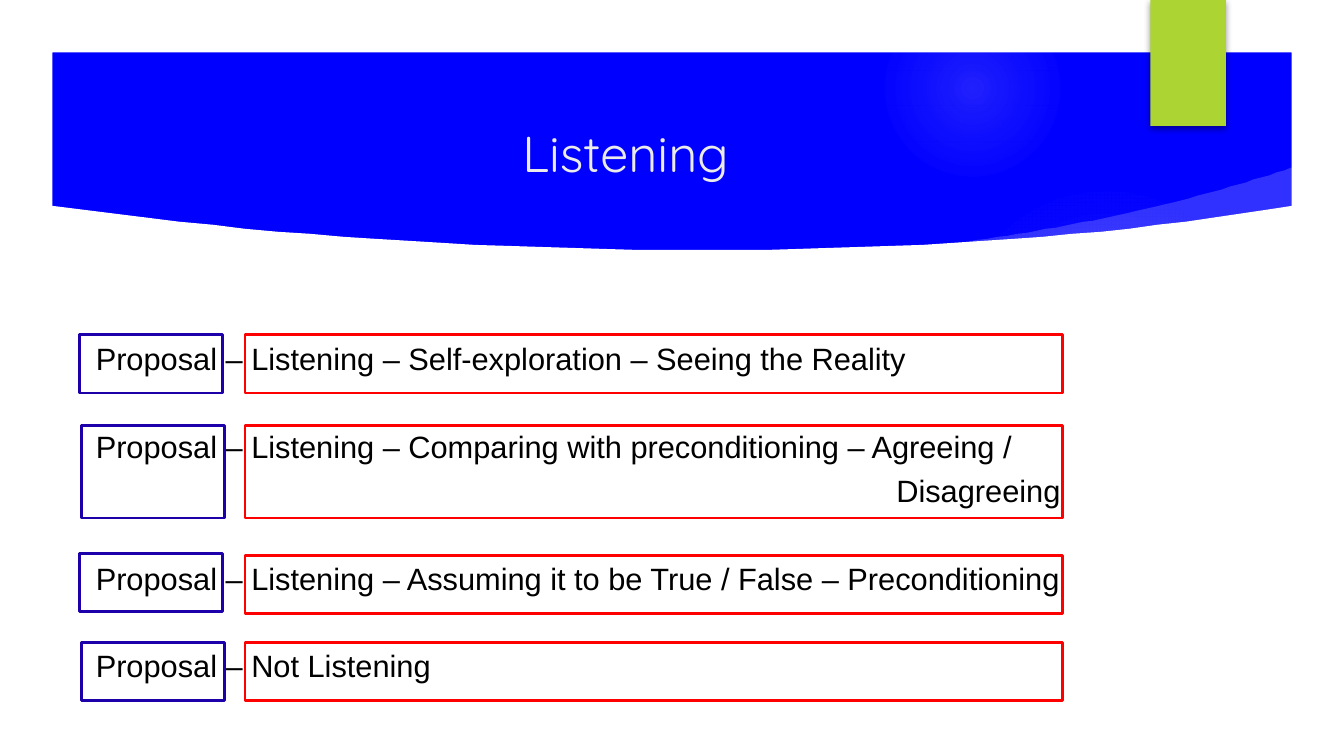
from pptx import Presentation
from pptx.dml.color import RGBColor
from pptx.enum.shapes import MSO_SHAPE as Kind
from pptx.enum.text import MSO_ANCHOR as Anchor, MSO_AUTO_SIZE as Fit, PP_ALIGN as Align
from pptx.oxml import parse_xml
from pptx.oxml.ns import nsdecls
from pptx.util import Pt

PX = 9144  # EMU per px, 100 px to the inch
WIDE, HIGH = 1333, 750
HEX = {"blue": "0000FF", "white": "FFFFFF", "green": "ACD433", "pale": "EBEBEB",
       "glow": "F7F7F7", "black": "000000", "red": "FF0000", "navy": "1E00AA"}

# text, space before in points, left margin in px
LINES = [
    ("Proposal – Listening – Self-exploration – Seeing the Reality", 0, 0),
    ("Proposal – Listening – Comparing with preconditioning – Agreeing /", 36.1, 0),
    ("Disagreeing", 5.4, 794),
    ("Proposal – Listening – Assuming it to be True / False – Preconditioning", 36.1, 0),
    ("Proposal – Not Listening", 36.1, 0),
]
# navy left, navy top, red top, height
ROWS = [(79, 332, 332, 58), (81, 422, 422, 92), (79, 549, 551, 58), (81, 637, 637, 58)]


def emu(*sizes):
    return [round(size * PX) for size in sizes]


def color(name):
    return RGBColor.from_string(HEX[name])


def paint(shape, fill=None, line=None):
    shape.shadow.inherit = False
    if fill:
        shape.fill.solid()
        shape.fill.fore_color.rgb = color(fill)
    else:
        shape.fill.background()
    if line:
        shape.line.color.rgb = color(line)
        shape.line.width = Pt(2)
    else:
        shape.line.fill.background()
    return shape


def block(slide, kind, box, **look):
    return paint(slide.shapes.add_shape(kind, *emu(*box)), **look)


def outline(slide, points, fill):
    pen = slide.shapes.build_freeform(*points[0], scale=PX)
    pen.add_line_segments(points[1:], close=True)
    return paint(pen.convert_to_shape(), fill=fill)


def curve(*knots, steps=40):
    """Points along the Bezier curve with these control points."""
    def at(t):
        row = knots
        while len(row) > 1:
            row = [(a + (c - a) * t, b + (d - b) * t) for (a, b), (c, d) in zip(row, row[1:])]
        return row[0]
    return [at(i / steps) for i in range(steps + 1)]


def glow(slide, box, stops):
    """Round light that fades out; stops are (percent, opacity)."""
    disc = block(slide, Kind.OVAL, box, fill="glow")
    marks = "".join(
        f'<a:gs pos="{at * 1000}"><a:srgbClr val="{HEX["glow"]}">'
        f'<a:alpha val="{alpha * 1000}"/></a:srgbClr></a:gs>' for at, alpha in stops)
    grad = parse_xml(
        f'<a:gradFill {nsdecls("a")}><a:gsLst>{marks}</a:gsLst><a:path path="circle">'
        '<a:fillToRect l="50000" t="50000" r="50000" b="50000"/></a:path></a:gradFill>')
    props = disc._element.spPr
    props.replace(props.find(".//{*}solidFill"), grad)


def banner(slide, box):
    x, y, w, h = box
    end = x + w
    glow(slide, (x + 891, y + 131, 308, 308), [(0, 6), (36, 5), (69, 0), (100, 0)])
    glow(slide, (x + 825, y - 52, 175, 175), [(0, 13), (36, 6), (73, 0), (100, 0)])

    crest = curve((end - 354, y + 192), (end - 149, y + 165), (end - 2, y + 114))
    sweep = outline(slide, crest + [(end + 5, y + 161), (end - 350, y + 199)], "white")
    tint = sweep._element.spPr.find(".//{*}srgbClr")
    tint.append(parse_xml(f'<a:alpha {nsdecls("a")} val="19000"/>'))

    edge = y + 152
    dip = curve((x - 2, edge), (x + 423, edge + 59), (end - 345, edge + 59), (end, edge))
    outline(slide, dip + [(end, y + h), (x - 2, y + h)], "white")

    frame = block(slide, Kind.FRAME, (0, 0, WIDE, HIGH), fill="white")
    frame.adjustments[0] = y / HIGH


def tab(slide, box):
    flag = block(slide, Kind.RECTANGLE, box, fill="green")
    flag._element.spPr.find("{*}effectLst").append(parse_xml(
        f'<a:outerShdw {nsdecls("a")} blurRad="63500" dist="25400" dir="5400000">'
        f'<a:srgbClr val="{HEX["black"]}"><a:alpha val="44000"/></a:srgbClr></a:outerShdw>'))


def place(slide, holder, box):
    holder.left, holder.top, holder.width, holder.height = emu(*box)
    slide.shapes._spTree.append(holder._element)  # in front of the banner
    frame = holder.text_frame
    frame.word_wrap, frame.auto_size = True, Fit.NONE
    frame.vertical_anchor = Anchor.TOP
    return frame


def write(para, text, font="Arial", size=22, ink="black", before=0, left=0):
    props = para._p.get_or_add_pPr()
    props.set("marL", str(left * PX))
    props.set("indent", "0")
    props.append(parse_xml(f'<a:buNone {nsdecls("a")}/>'))
    para.text = text
    para.alignment = Align.LEFT
    para.space_before = Pt(before)
    para.font.name, para.font.size = font, Pt(size)
    para.font.color.rgb = color(ink)


def title(slide, box):
    frame = place(slide, slide.shapes.title, box)
    write(frame.paragraphs[0], "Listening", font="Quicksand", size=36, ink="pale")


def body(slide, box):
    frame = place(slide, slide.placeholders[1], box)
    for i, (text, before, left) in enumerate(LINES):
        para = frame.add_paragraph() if i else frame.paragraphs[0]
        write(para, text, before=before, left=left)


def boxes(slide):
    for left, top, drop, high in ROWS:
        block(slide, Kind.RECTANGLE, (243, drop, 811, high), line="red")
        block(slide, Kind.RECTANGLE, (left, top, 142, high), line="navy")


def main():
    deck = Presentation()
    deck.slide_width, deck.slide_height = emu(WIDE, HIGH)
    slide = deck.slides.add_slide(deck.slide_layouts[1])
    back = slide.background.fill
    back.solid()
    back.fore_color.rgb = color("blue")
    banner(slide, (52, 52, 1231, 648))
    tab(slide, (1141, 0, 75, 125))
    title(slide, (508, 116, 600, 70))
    body(slide, (85, 332, 1200, 390))
    boxes(slide)
    deck.save("out.pptx")


if __name__ == "__main__":
    main()
